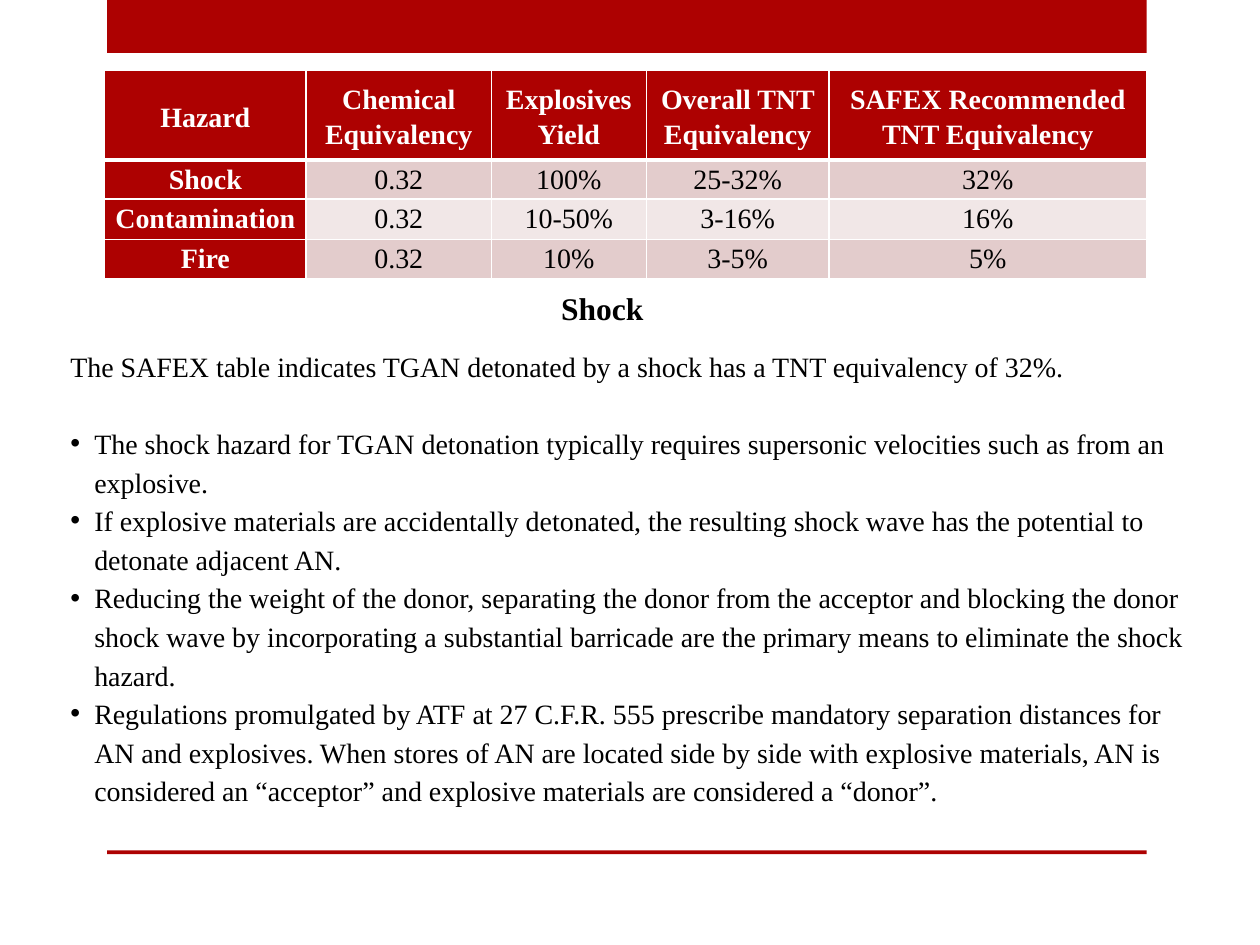
from lxml import etree
from pptx import Presentation
from pptx.dml.color import RGBColor
from pptx.enum.shapes import MSO_SHAPE
from pptx.enum.text import MSO_ANCHOR, MSO_AUTO_SIZE, PP_ALIGN
from pptx.oxml.ns import qn
from pptx.util import Inches, Pt

CENTER, LEFT = PP_ALIGN.CENTER, PP_ALIGN.LEFT
MIDDLE, TOP = MSO_ANCHOR.MIDDLE, MSO_ANCHOR.TOP
RECTANGLE = MSO_SHAPE.RECTANGLE
GROW = MSO_AUTO_SIZE.SHAPE_TO_FIT_TEXT

HAZARDS = [
    ("Hazard", "Chemical Equivalency", "Explosives Yield",
     "Overall TNT Equivalency", "SAFEX Recommended TNT Equivalency"),
    ("Shock", "0.32", "100%", "25-32%", "32%"),
    ("Contamination", "0.32", "10-50%", "3-16%", "16%"),
    ("Fire", "0.32", "10%", "3-5%", "5%"),
]
HEADING = "Shock"
INTRO = "The SAFEX table indicates TGAN detonated by a shock has a TNT equivalency of 32%."
POINTS = [
    "The shock hazard for TGAN detonation typically requires supersonic velocities "
    "such as from an explosive.",
    "If explosive materials are accidentally detonated, the resulting shock wave has "
    "the potential to detonate adjacent AN.",
    "Reducing the weight of the donor, separating the donor from the acceptor and "
    "blocking the donor shock wave by incorporating a substantial barricade are the "
    "primary means to eliminate the shock hazard.",
    "Regulations promulgated by ATF at 27 C.F.R. 555 prescribe mandatory separation "
    "distances for AN and explosives. When stores of AN are located side by side with "
    "explosive materials, AN is considered an “acceptor” and explosive materials are "
    "considered a “donor”.",
]

COLORS = {"red": "AD0101", "odd": "E3CCCC", "even": "F1E7E7",
          "white": "FFFFFF", "black": "000000"}
FONT = "Times New Roman"
SLIDE_W, SLIDE_H = 10, 7.5
BAR_LEFT, BAR_W = 0.85, 8.25
BARS = [(0, 0.42), (0.9 * SLIDE_H, 0.03)]
TABLE_LEFT, TABLE_TOP = 0.83, 0.56
COLUMNS = [1.6, 1.47, 1.23, 1.45, 2.52]
ROWS = [0.71, 0.31, 0.32, 0.31]
BODY = (-0.04, 2.2, 9.64, 4.49)
LINE_SPACING = 1.15
BLANK_LINE = 22

HEADING_FORMAT = {"alignment": CENTER, "space_after": Pt(10)}
INTRO_FORMAT = {"alignment": LEFT, "space_after": Pt(BLANK_LINE)}
POINT_FORMAT = {"alignment": LEFT, "space_after": Pt(0)}


def color(name):
    return RGBColor.from_string(COLORS[name])


def write(paragraph, text, formats, size=16, bold=False, ink="black"):
    for key, value in {"line_spacing": LINE_SPACING, **formats}.items():
        setattr(paragraph, key, value)
    run = paragraph.add_run()
    run.text = text
    for key, value in {"name": FONT, "size": Pt(size), "bold": bold}.items():
        setattr(run.font, key, value)
    run.font.color.rgb = color(ink)


def indent(paragraph, margin, first=0, bullet=None):
    props = paragraph._p.get_or_add_pPr()
    props.set("marL", str(Inches(margin)))
    props.set("indent", str(Inches(first)))
    if bullet:
        etree.SubElement(props, qn("a:buFont"), typeface="Arial")
        etree.SubElement(props, qn("a:buChar"), char=bullet)


def add_borders(cell, widths):
    props = cell._tc.get_or_add_tcPr()
    for side, width in widths.items():
        line = etree.SubElement(props, qn(f"a:ln{side}"), w=str(Pt(width)))
        fill = etree.SubElement(line, qn("a:solidFill"))
        etree.SubElement(fill, qn("a:srgbClr"), val=COLORS["white"])


def add_bars(slide):
    for top, height in BARS:
        bar = slide.shapes.add_shape(RECTANGLE, *map(Inches, (BAR_LEFT, top, BAR_W, height)))
        bar.shadow.inherit = False
        bar.fill.solid()
        bar.fill.fore_color.rgb = color("red")
        bar.line.fill.background()


def add_hazard_table(slide):
    place = map(Inches, (TABLE_LEFT, TABLE_TOP, sum(COLUMNS), sum(ROWS)))
    table = slide.shapes.add_table(len(ROWS), len(COLUMNS), *place).table
    for column, width in zip(table.columns, COLUMNS):
        column.width = Inches(width)
    for row, height in zip(table.rows, ROWS):
        row.height = Inches(height)
    for r, values in enumerate(HAZARDS):
        for c, value in enumerate(values):
            cell = table.cell(r, c)
            header = r == 0 or c == 0
            cell_format = {"margin_left": Inches(0.07), "margin_right": Inches(0.07),
                           "margin_top": 0, "margin_bottom": 0,
                           "vertical_anchor": TOP if r else MIDDLE}
            for key, setting in cell_format.items():
                setattr(cell, key, setting)
            add_borders(cell, {"L": 1, "R": 1, "T": 3 if r == 1 else 1,
                               "B": 3 if r == 0 else 1})
            cell.fill.solid()
            cell.fill.fore_color.rgb = color("red" if header else "odd" if r % 2 else "even")
            write(cell.text_frame.paragraphs[0], value, {"alignment": CENTER},
                  bold=header, ink="white" if header else "black")


def add_body(slide):
    frame = slide.shapes.add_textbox(*map(Inches, BODY)).text_frame
    frame.word_wrap = True
    frame.auto_size = GROW
    write(frame.paragraphs[0], HEADING, HEADING_FORMAT, size=18, bold=True)
    intro = frame.add_paragraph()
    indent(intro, 0.5)
    write(intro, INTRO, INTRO_FORMAT)
    for point in POINTS:
        paragraph = frame.add_paragraph()
        indent(paragraph, 0.69, -0.19, "•")
        write(paragraph, point, POINT_FORMAT)


def main():
    deck = Presentation()
    deck.slide_width, deck.slide_height = Inches(SLIDE_W), Inches(SLIDE_H)
    slide = deck.slides.add_slide(deck.slide_layouts[6])
    add_bars(slide)
    add_hazard_table(slide)
    add_body(slide)
    deck.save("out.pptx")


if __name__ == "__main__":
    main()
